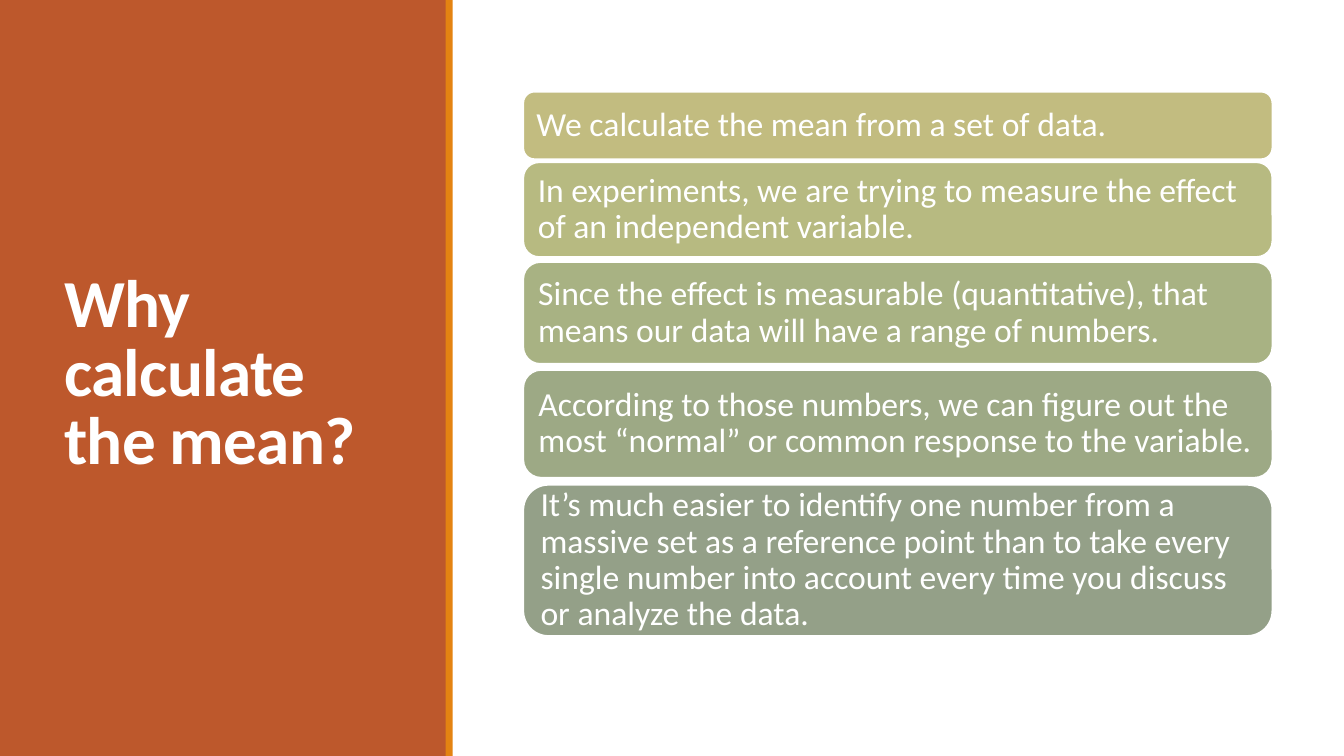
import pptx
import pptx.dml.color
import pptx.enum.shapes
import pptx.enum.text
import pptx.util

Inches = pptx.util.Inches
Shapes = pptx.enum.shapes.MSO_SHAPE

CARD_LEFT, CARD_WIDTH = 5.19, 7.43

# Top, height, fill and text of each reason
REASONS = [
    (0.91, 0.67, "C2BC80", "We calculate the mean from a set of data."),
    (1.61, 0.94, "B7BA81",
     "In experiments, we are trying to measure the effect of an independent variable."),
    (2.6, 1.01, "A8B283",
     "Since the effect is measurable (quantitative), that means our data will have "
     "a range of numbers."),
    (3.67, 1.07, "9DA985",
     "According to those numbers, we can figure out the most “normal” or common "
     "response to the variable."),
    (4.81, 1.5, "94A088",
     "It’s much easier to identify one number from a massive set as a reference point "
     "than to take every single number into account every time you discuss or analyze "
     "the data."),
]


def color(hex_string):
    return pptx.dml.color.RGBColor.from_string(hex_string)


def add_block(slide, kind, left, top, width, height, fill, line=None):
    shape = slide.shapes.add_shape(
        kind, Inches(left), Inches(top), Inches(width), Inches(height))
    shape.shadow.inherit = False
    shape.fill.solid()
    shape.fill.fore_color.rgb = color(fill)
    if line:
        shape.line.color.rgb = color(line)
        shape.line.width = pptx.util.Pt(1.25)
    else:
        shape.line.fill.background()
    return shape


def write_text(shape, text, size, line_spacing, bold=False):
    frame = shape.text_frame
    frame.word_wrap = True
    frame.vertical_anchor = pptx.enum.text.MSO_ANCHOR.MIDDLE
    frame.margin_left = frame.margin_right = Inches(0.1)
    frame.margin_top = frame.margin_bottom = 0
    paragraph = frame.paragraphs[0]
    paragraph.alignment = pptx.enum.text.PP_ALIGN.LEFT
    paragraph.line_spacing = line_spacing
    run = paragraph.add_run()
    run.text = text
    run.font.name = "Calibri"
    run.font.size = pptx.util.Pt(size)
    run.font.bold = bold
    run.font.color.rgb = color("FFFFFF")
    return run


def add_title(slide, text):
    box = slide.shapes.add_textbox(
        Inches(0.54), Inches(0.57), Inches(3.37), Inches(6.31))
    run = write_text(box, text, 48, 0.85, bold=True)
    # Slightly tightened letter spacing, in hundredths of a point
    run.font._element.set("spc", "-50")


def add_card(slide, top, height, fill, text):
    card = add_block(slide, Shapes.ROUNDED_RECTANGLE,
                     CARD_LEFT, top, CARD_WIDTH, height, fill, line="FFFFFF")
    write_text(card, text, 24, 0.9)


def main():
    presentation = pptx.Presentation()
    presentation.slide_width = Inches(13.33)
    presentation.slide_height = Inches(7.5)
    slide = presentation.slides.add_slide(presentation.slide_layouts[6])

    # Title panel with its accent strip
    add_block(slide, Shapes.RECTANGLE, 0, 0, 4.43, 7.5, "BD582C")
    add_block(slide, Shapes.RECTANGLE, 4.42, 0, 0.07, 7.5, "E48312")
    add_title(slide, "Why calculate the mean?")

    # Reasons
    for reason in REASONS:
        add_card(slide, *reason)

    presentation.save("out.pptx")


if __name__ == "__main__":
    main()
